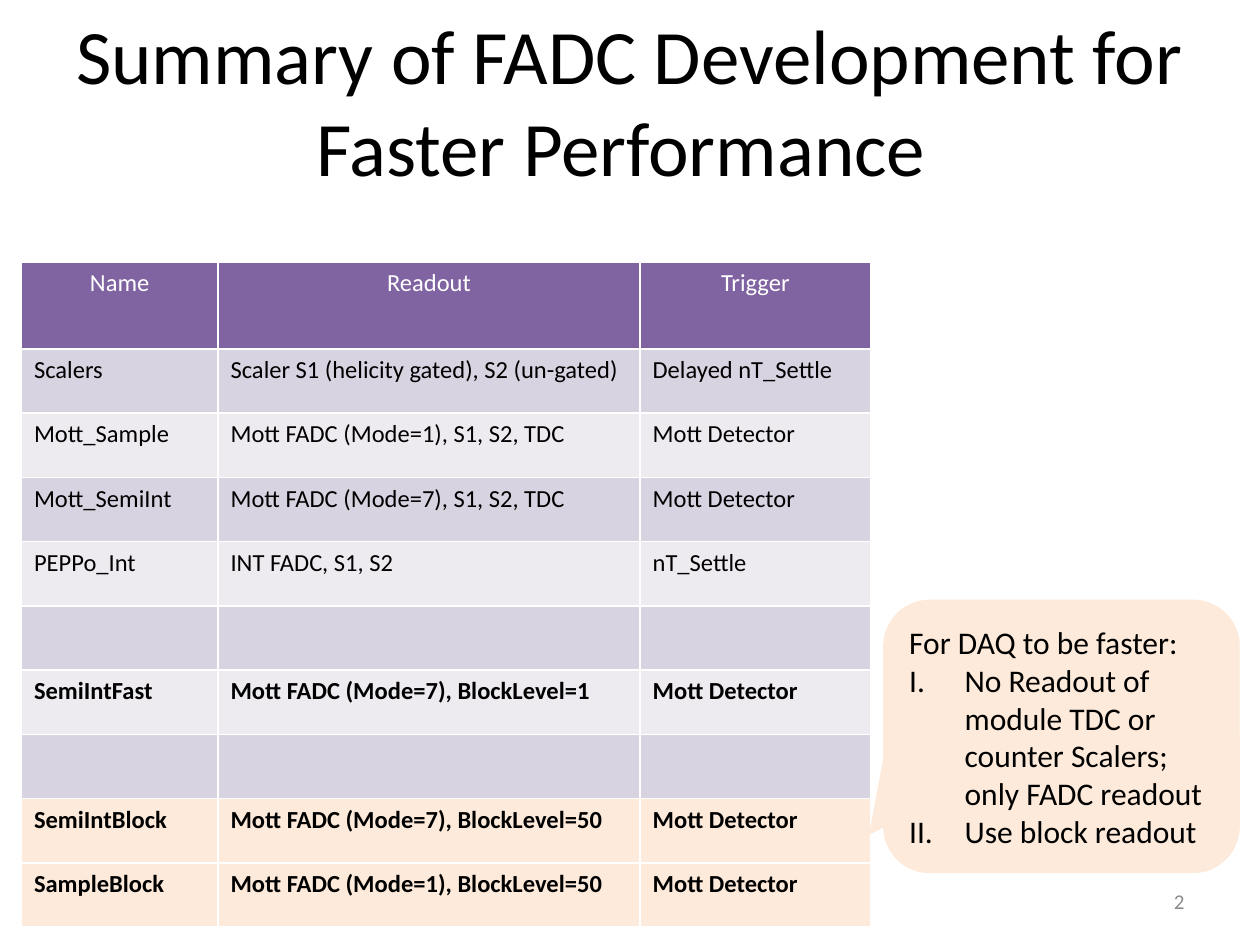
from pptx import Presentation, util as u
from pptx.dml.color import RGBColor
from pptx.enum import shapes, text
from pptx.oxml import parse_xml
from pptx.oxml.ns import nsdecls

Inches = u.Inches
BLACK, WHITE, PEACH = "000000", "FFFFFF", "FDEADA"
PURPLE, BANDS = "8064A2", ("D8D3E0", "EDEAF0")


def paint(fill, color):
    fill.solid()
    fill.fore_color.rgb = RGBColor.from_string(color)


def style(par, size, color, align=text.PP_ALIGN.LEFT, bold=False):
    par.alignment = align
    par.font.name, par.font.size, par.font.bold = "Calibri", u.Pt(size), bold
    paint(par.font.fill, color)


prs = Presentation()
prs.slide_width, prs.slide_height = Inches(10), Inches(7.5)
slide = prs.slides.add_slide(prs.slide_layouts[6])

# Title and page number
labels = [
    ("Summary of FADC Development for Faster Performance ",
     (0, 0, 10, 1.58), 44, BLACK, text.PP_ALIGN.CENTER),
    ("2", (7.17, 6.95, 2.33, 0.4), 12, "8C8C8C", text.PP_ALIGN.RIGHT),
]
for words, place, size, color, align in labels:
    frame = slide.shapes.add_textbox(*map(Inches, place)).text_frame
    frame.word_wrap = True
    frame.vertical_anchor = text.MSO_ANCHOR.MIDDLE
    frame.text = words
    style(frame.paragraphs[0], size, color, align)

# Table of readout modes
rows = [
    ("Name", "Readout", "Trigger"),
    ("Scalers", "Scaler S1 (helicity gated), S2 (un-gated)", "Delayed nT_Settle"),
    ("Mott_Sample", "Mott FADC (Mode=1), S1, S2, TDC", "Mott Detector"),
    ("Mott_SemiInt", "Mott FADC (Mode=7), S1, S2, TDC", "Mott Detector"),
    ("PEPPo_Int", "INT FADC, S1, S2", "nT_Settle"),
    ("", "", ""),
    ("SemiIntFast", "Mott FADC (Mode=7), BlockLevel=1", "Mott Detector"),
    ("", "", ""),
    ("SemiIntBlock", "Mott FADC (Mode=7), BlockLevel=50", "Mott Detector"),
    ("SampleBlock", "Mott FADC (Mode=1), BlockLevel=50", "Mott Detector"),
]
table = slide.shapes.add_table(
    len(rows), 3, Inches(0.17), Inches(2.08), Inches(6.74), Inches(5.25)).table
for col, width in zip(table.columns, (1.56, 3.35, 1.83)):
    col.width = Inches(width)
for i, row in enumerate(rows):
    head = i == 0
    table.rows[i].height = Inches(0.69 if head else 0.51)
    fill = PURPLE if head else PEACH if i >= 8 else BANDS[(i - 1) % 2]
    for cell, words in zip(table.rows[i].cells, row):
        cell.text = words
        paint(cell.fill, fill)
        style(cell.text_frame.paragraphs[0], 14, WHITE if head else BLACK,
              text.PP_ALIGN.CENTER if head else text.PP_ALIGN.LEFT, i >= 6)

# Callout on speed
note = slide.shapes.add_shape(
    shapes.MSO_SHAPE.ROUNDED_RECTANGULAR_CALLOUT,
    Inches(7.01), Inches(4.76), Inches(2.83), Inches(2.17))
for i, value in enumerate((-0.54, 0.36, 0.17)):
    note.adjustments[i] = value
note.shadow.inherit = False
paint(note.fill, PEACH)
note.line.fill.background()
frame = note.text_frame
frame.word_wrap = True
frame.vertical_anchor = text.MSO_ANCHOR.MIDDLE
frame.text = "\n".join((
    "For DAQ to be faster:",
    "No Readout of module TDC or counter Scalers; only FADC readout",
    "Use block readout"))
for i, par in enumerate(frame.paragraphs):
    style(par, 18, BLACK)
    if i:
        props = par._p.get_or_add_pPr()
        props.set("marL", str(Inches(0.44)))
        props.set("indent", str(-Inches(0.44)))
        props.insert_element_before(
            parse_xml(f'<a:buAutoNum {nsdecls("a")} type="romanUcPeriod"/>'),
            "a:tabLst", "a:defRPr", "a:extLst")

prs.save("out.pptx")
